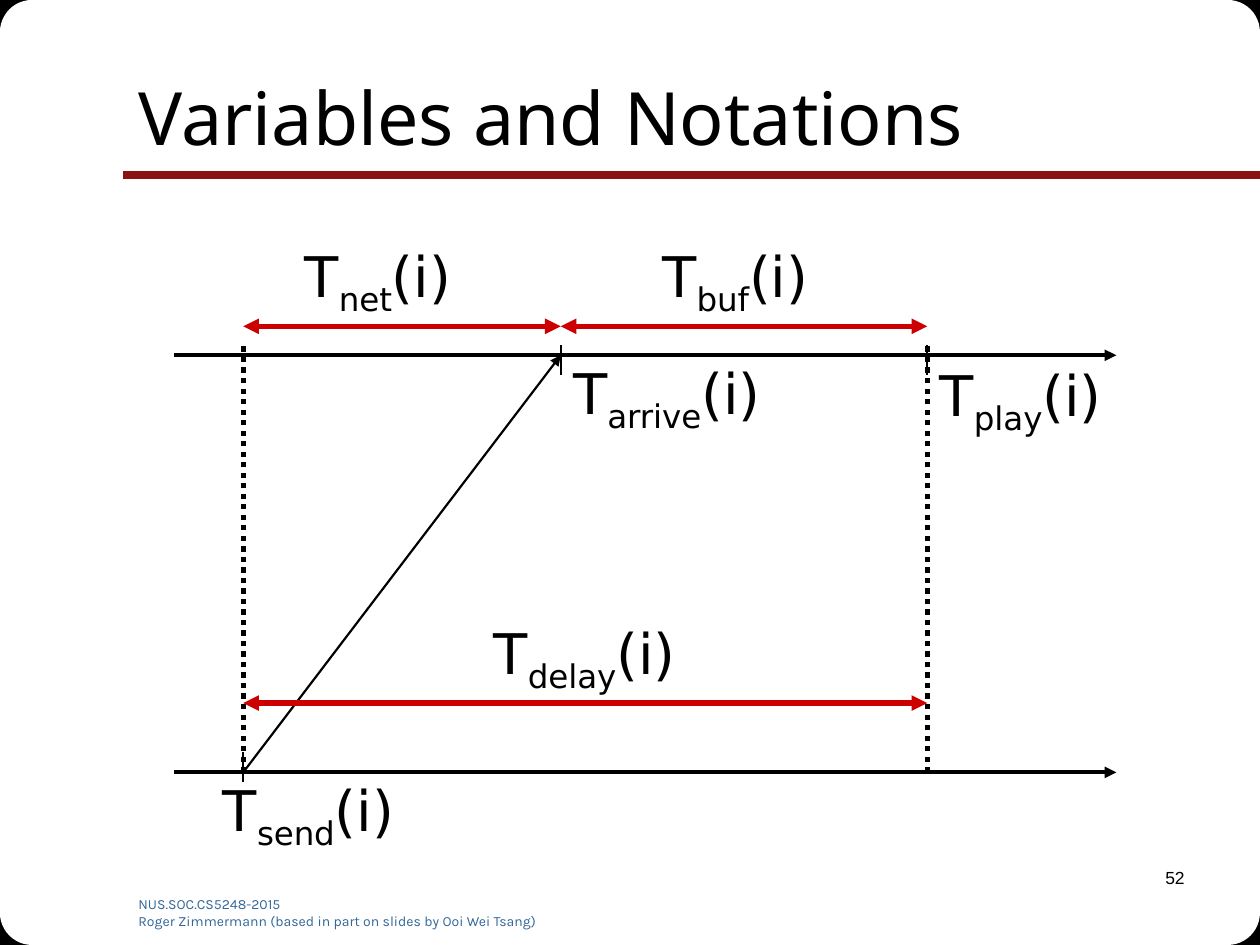
from lxml import etree
from pptx import Presentation
from pptx.dml.color import RGBColor
from pptx.enum.dml import MSO_LINE
from pptx.enum.shapes import MSO_CONNECTOR, MSO_SHAPE
from pptx.enum.text import MSO_ANCHOR, MSO_AUTO_SIZE, PP_ALIGN
from pptx.oxml.ns import qn
from pptx.util import Inches, Pt

STRAIGHT = MSO_CONNECTOR.STRAIGHT
RECT, ROUNDED = MSO_SHAPE.RECTANGLE, MSO_SHAPE.ROUNDED_RECTANGLE
DOTTED = MSO_LINE.ROUND_DOT
LEFT, RIGHT = PP_ALIGN.LEFT, PP_ALIGN.RIGHT
TOP, MIDDLE = MSO_ANCHOR.TOP, MSO_ANCHOR.MIDDLE
FIT, FIXED = MSO_AUTO_SIZE.SHAPE_TO_FIT_TEXT, MSO_AUTO_SIZE.NONE

WIDTH, HEIGHT = 10, 7.5
BLACK, WHITE, RED, MAROON, BLUE = "000000", "FFFFFF", "CC0000", "891411", "336699"

TITLE = "Variables and Notations"
FOOTER = ["NUS.SOC.CS5248-2015",
          "Roger Zimmermann (based in part on slides by Ooi Wei Tsang)"]
PAGE = "52"

SEND, ARRIVE, PLAY = 1.93, 4.45, 7.36
AXIS_START, AXIS_END = 1.38, 8.86
RECEIVER, SENDER = 2.82, 6.13
TICK_TOP, TICK = 2.74, 0.24
SPAN_ROW, DELAY_ROW = 2.59, 5.58
LABEL_HEIGHT = 0.64

AXES = [SENDER, RECEIVER]
TICKS = [(SEND, 5.97), (ARRIVE, TICK_TOP), (PLAY, TICK_TOP)]
GUIDES = [SEND, PLAY]
SPANS = [(SEND, ARRIVE, SPAN_ROW), (ARRIVE, PLAY, SPAN_ROW), (SEND, PLAY, DELAY_ROW)]
LABELS = [
    ("send", 1.67, 6.11, 1.69),
    ("play", PLAY, 2.81, 1.61),
    ("arrive", ARRIVE, 2.8, 1.85),
    ("buf", 5.16, 1.87, 1.47),
    ("net", 2.32, 1.87, 1.47),
    ("delay", 3.82, 4.86, 1.78),
]


def color(hex_code):
    return RGBColor.from_string(hex_code)


def add_corners(slide, kind, size, fill):
    for left in (0, WIDTH - size):
        for top in (0, HEIGHT - size):
            corner = slide.shapes.add_shape(
                kind, Inches(left), Inches(top), Inches(size), Inches(size))
            corner.shadow.inherit = False
            corner.fill.solid()
            corner.fill.fore_color.rgb = color(fill)
            corner.line.fill.background()


def add_line(slide, start, end, weight, stroke=BLACK, dash=None, arrows=()):
    line = slide.shapes.add_connector(STRAIGHT, *map(Inches, start + end))
    line.line.color.rgb = color(stroke)
    line.line.width = Pt(weight)
    if dash:
        line.line.dash_style = dash
    outline = line.line._get_or_add_ln()
    for arrow in arrows:
        etree.SubElement(outline, qn("a:" + arrow), type="triangle")
    etree.SubElement(line.element.spPr, qn("a:effectLst"))


def style(paragraph, size, face, ink=BLACK, align=LEFT):
    paragraph.alignment = align
    paragraph.font.size = Pt(size)
    paragraph.font.name = face
    paragraph.font.color.rgb = color(ink)


def add_text(slide, left, top, width, height, wrap=True):
    frame = slide.shapes.add_textbox(*map(Inches, (left, top, width, height))).text_frame
    frame.word_wrap = wrap
    frame.vertical_anchor = TOP
    return frame


def add_label(slide, subscript, left, top, width):
    frame = add_text(slide, left, top, width, LABEL_HEIGHT, wrap=False)
    frame.auto_size = FIT
    paragraph = frame.paragraphs[0]
    style(paragraph, 32, "DejaVu Sans")
    for part in ("T", subscript, "(i)"):
        run = paragraph.add_run()
        run.text = part
        if part == subscript:
            run.font._element.set("baseline", "-25000")


def add_title(slide):
    title = slide.shapes.title
    title.left, title.top, title.width, title.height = map(Inches, (1, 0.3, 8.5, 1.25))
    title.text_frame.text = TITLE
    title.text_frame.auto_size = FIXED
    title.text_frame.vertical_anchor = MIDDLE
    style(title.text_frame.paragraphs[0], 42, "Noto Sans")
    title.element.getparent().append(title.element)


def add_frame(slide):
    add_corners(slide, RECT, 0.43, BLACK)
    add_corners(slide, ROUNDED, 1.53, WHITE)
    add_line(slide, (WIDTH, 1.39), (0.98, 1.39), 4.5, MAROON)
    footer = add_text(slide, 1, 7.06, 3.42, 0.28)
    footer.text = "\n".join(FOOTER)
    for paragraph in footer.paragraphs:
        style(paragraph, 8, "Karla", BLUE)
    page = add_text(slide, 7.42, 6.83, 2.08, 0.5)
    page.text = PAGE
    style(page.paragraphs[0], 10, "Arial", align=RIGHT)
    add_title(slide)


def add_timeline(slide):
    for row in AXES:
        add_line(slide, (AXIS_START, row), (AXIS_END, row), 2.25, arrows=["tailEnd"])
    add_line(slide, (SEND, SENDER), (ARRIVE, RECEIVER), 1.25, arrows=["tailEnd"])
    for moment, top in TICKS:
        add_line(slide, (moment, top), (moment, top + TICK), 1.25)
    for moment in GUIDES:
        add_line(slide, (moment, SENDER), (moment, TICK_TOP), 3, dash=DOTTED)
    for start, end, row in SPANS:
        add_line(slide, (start, row), (end, row), 3, RED, arrows=["headEnd", "tailEnd"])
    for label in LABELS:
        add_label(slide, *label)


def main():
    deck = Presentation()
    deck.slide_width, deck.slide_height = Inches(WIDTH), Inches(HEIGHT)
    slide = deck.slides.add_slide(deck.slide_layouts[5])
    add_frame(slide)
    add_timeline(slide)
    deck.save("out.pptx")


if __name__ == "__main__":
    main()
